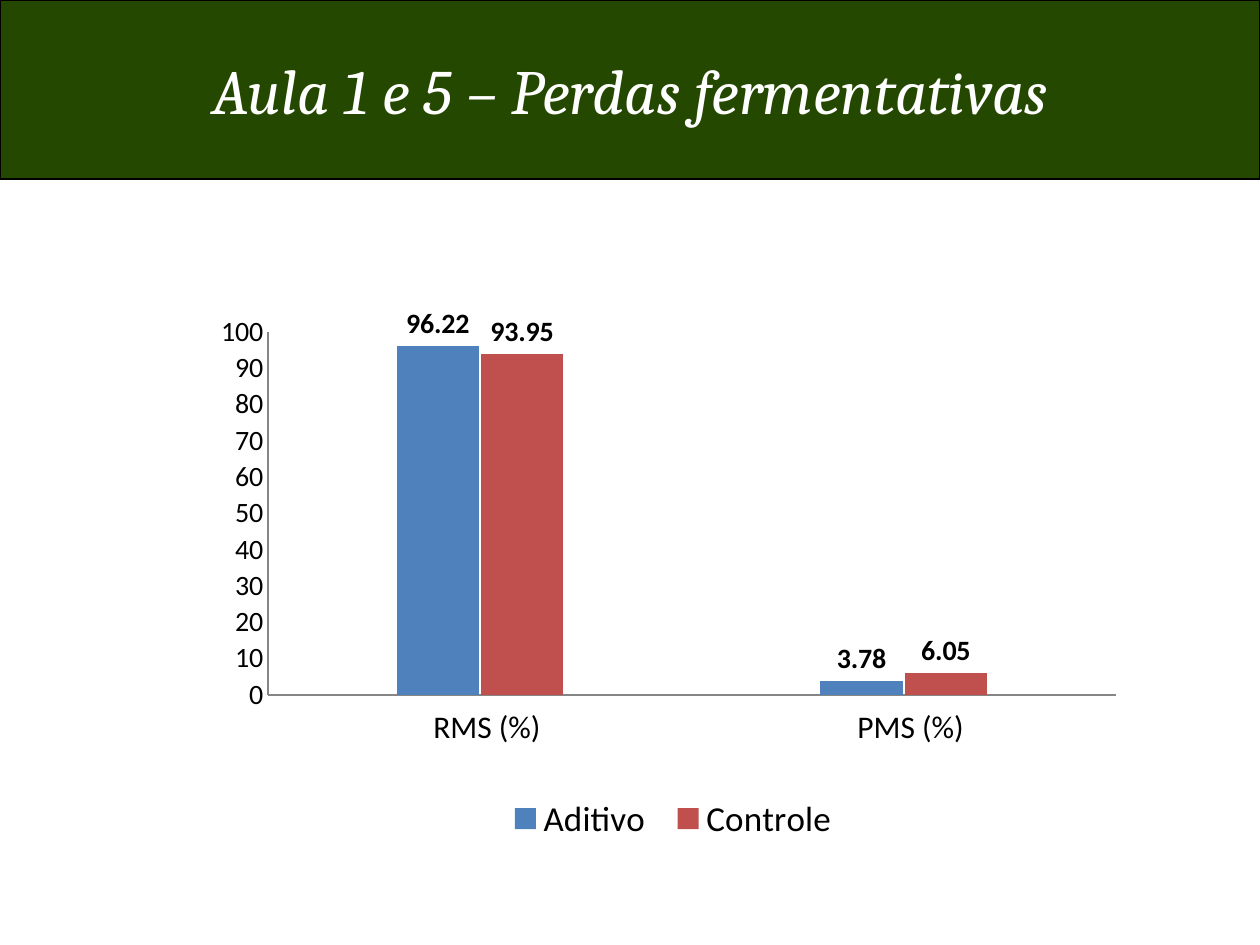
from lxml.etree import SubElement, Element
from pptx import Presentation
from pptx.chart.data import CategoryChartData
from pptx.dml.color import RGBColor
from pptx.enum.chart import (XL_CHART_TYPE, XL_LABEL_POSITION,
                             XL_LEGEND_POSITION, XL_TICK_LABEL_POSITION,
                             XL_TICK_MARK)
from pptx.enum.shapes import MSO_SHAPE
from pptx.enum.text import MSO_ANCHOR, PP_ALIGN
from pptx.oxml.ns import qn
from pptx.util import Inches, Pt

# Content
TITLE = "Aula 1 e 5 – Perdas fermentativas"
CATEGORIES = ["RMS (%)", "PMS (%)"]
SERIES = [("Aditivo", (96.22, 3.78)), ("Controle", (93.95, 6.05))]

# Look
THEME = {
    "band": "244800", "black": "000000", "white": "FFFFFF", "axis": "868686",
    "series": ["4F81BD", "C0504D"],
    "title_font": "Cambria", "body_font": "Calibri",
    "title": 36, "legend": 20, "category": 18, "value": 16,
}

# Geometry in inches; chart parts as shares of the chart frame
WIDTH, HEIGHT = 10, 7.5
BAND_HEIGHT = 1.42
CHART = (1.38, 2.18, 7.48, 4.57)
PLOT_SHARE = (0.1, 0.1, 0.9, 0.63)
LEGEND_SHARE = (0.34, 0.9, 0.38, 0.09)
LABEL_WIDTH, LABEL_HEIGHT, LABEL_TOP = 1.1, 0.4, 5.56
LABEL_SHIFT = 0.08


def color(name):
    return RGBColor.from_string(THEME.get(name, name))


def style_font(font, size, ink="black", family="body_font", **flags):
    font.name = THEME[family]
    font.size = Pt(THEME[size])
    font.color.rgb = color(ink)
    for flag, value in flags.items():
        setattr(font, flag, value)


def add_box(slide, frame, fill, text, align, line=None):
    box = slide.shapes.add_shape(MSO_SHAPE.RECTANGLE, *map(Inches, frame))
    box.shadow.inherit = False
    box.fill.solid()
    box.fill.fore_color.rgb = color(fill)
    if line:
        box.line.color.rgb = color(line)
        box.line.width = Pt(0.75)
    else:
        box.line.fill.background()
    box.text_frame.word_wrap = line is None
    box.text_frame.vertical_anchor = MSO_ANCHOR.MIDDLE
    paragraph = box.text_frame.paragraphs[0]
    paragraph.alignment = align
    run = paragraph.add_run()
    run.text = text
    return run


def set_layout(parent, index, shares, inner=False):
    """Place a chart part by shares of the chart frame."""
    for old in parent.findall(qn("c:layout")):
        parent.remove(old)
    layout = Element(qn("c:layout"))
    parent.insert(index, layout)
    manual = SubElement(layout, qn("c:manualLayout"))
    settings = [("layoutTarget", "inner")] if inner else []
    settings += [("xMode", "edge"), ("yMode", "edge")]
    settings += zip("xywh", map(str, shares))
    for tag, value in settings:
        SubElement(manual, qn(f"c:{tag}")).set("val", value)


def add_chart(slide):
    data = CategoryChartData(number_format="0.00")
    data.categories = CATEGORIES
    for name, values in SERIES:
        data.add_series(name, values)
    chart = slide.shapes.add_chart(
        XL_CHART_TYPE.COLUMN_CLUSTERED, *map(Inches, CHART), data).chart
    chart.has_title = False
    style_font(chart.font, "value")

    # Columns and their values
    plot = chart.plots[0]
    plot.vary_by_categories = False
    plot.gap_width, plot.overlap = 311, -2
    for series, fill in zip(plot.series, THEME["series"]):
        series.format.fill.solid()
        series.format.fill.fore_color.rgb = color(fill)
        labels = series.data_labels
        labels.show_value = True
        labels.position = XL_LABEL_POSITION.OUTSIDE_END
        labels.number_format = "0.00"
        labels.number_format_is_linked = False
        style_font(labels.font, "value", bold=True)

    # Axes
    for axis in (chart.category_axis, chart.value_axis):
        axis.has_major_gridlines = False
        axis.major_tick_mark = axis.minor_tick_mark = XL_TICK_MARK.NONE
        axis.format.line.color.rgb = color("axis")
        axis.format.line.width = Pt(0.75)
    chart.category_axis.tick_label_position = XL_TICK_LABEL_POSITION.NONE
    values = chart.value_axis
    values.minimum_scale, values.maximum_scale, values.major_unit = 0, 100, 10
    values.tick_labels.number_format = "General"
    values.tick_labels.number_format_is_linked = False
    style_font(values.tick_labels.font, "value")

    # Legend and manual placement
    chart.has_legend = True
    legend = chart.legend
    legend.position = XL_LEGEND_POSITION.BOTTOM
    legend.include_in_layout = False
    style_font(legend.font, "legend")
    plot_area = chart.element.find(".//" + qn("c:plotArea"))
    set_layout(plot_area, 0, PLOT_SHARE, inner=True)
    set_layout(chart.element.find(".//" + qn("c:legend")), 1, LEGEND_SHARE)


def add_category_labels(slide):
    left, _, width, _ = CHART
    plot_left = left + PLOT_SHARE[0] * width
    step = PLOT_SHARE[2] * width / len(CATEGORIES)
    for index, text in enumerate(CATEGORIES):
        center = plot_left + (index + 0.5) * step + LABEL_SHIFT
        frame = (center - LABEL_WIDTH / 2, LABEL_TOP, LABEL_WIDTH, LABEL_HEIGHT)
        run = add_box(slide, frame, "white", text, PP_ALIGN.LEFT)
        style_font(run.font, "category")


def main():
    presentation = Presentation()
    presentation.slide_width = Inches(WIDTH)
    presentation.slide_height = Inches(HEIGHT)
    slide = presentation.slides.add_slide(presentation.slide_layouts[6])

    # Title band
    run = add_box(slide, (0, 0, WIDTH, BAND_HEIGHT), "band", TITLE,
                  PP_ALIGN.CENTER, line="black")
    style_font(run.font, "title", "white", "title_font", italic=True)

    add_chart(slide)
    add_category_labels(slide)
    presentation.save("out.pptx")


if __name__ == "__main__":
    main()
